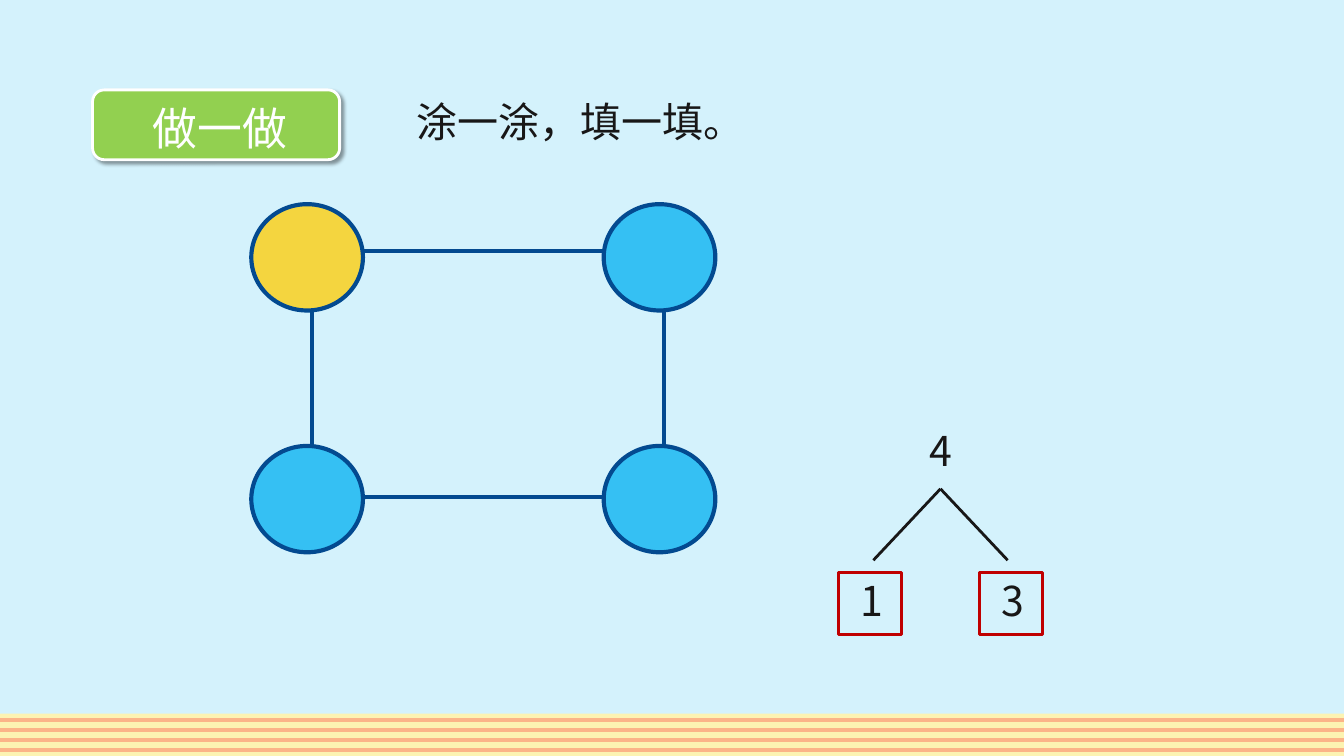
from lxml import etree
from pptx import Presentation
from pptx import util as u
from pptx.dml.color import RGBColor
from pptx.enum import shapes, text
from pptx.oxml import ns

FONT = "Noto Sans CJK SC"
INK, NAVY, RED, WHITE = "181717", "034A90", "C00000", "FFFFFF"
YELLOW, BLUE = "FFCC00", "00B0F0"
W, H = 25.4, 14.29
KIND = shapes.MSO_SHAPE


def rgb(value):
    """Turn a hex string into a colour."""
    return RGBColor.from_string(value)


def sub(parent, tag, **attrs):
    """Append a DrawingML element to a parent."""
    return etree.SubElement(parent, ns.qn(tag), attrs)


def shape(s, kind, box, fill=None, line=None, width=1.5, alpha=None):
    """Add a preset shape with optional fill, transparency and outline."""
    sp = s.shapes.add_shape(kind, *map(u.Cm, box))
    sp.shadow.inherit = False
    if fill:
        sp.fill.solid()
        sp.fill.fore_color.rgb = rgb(fill)
        if alpha:
            clr = sp._element.spPr.find(".//" + ns.qn("a:srgbClr"))
            sub(clr, "a:alpha", val=str(alpha * 1000))
    else:
        sp.fill.background()
    if line:
        sp.line.color.rgb = rgb(line)
        sp.line.width = u.Pt(width)
    else:
        sp.line.fill.background()
    return sp


def line(s, x1, y1, x2, y2, color, width):
    """Add a straight line without shadow."""
    c = s.shapes.add_connector(shapes.MSO_CONNECTOR.STRAIGHT, *map(u.Cm, (x1, y1, x2, y2)))
    c.line.color.rgb = rgb(color)
    c.line.width = u.Pt(width)
    sub(c._element.spPr, "a:effectLst")


def write(sp, words, size=22, color=INK, align=text.PP_ALIGN.CENTER):
    """Fill a shape with one formatted paragraph."""
    tf = sp.text_frame
    tf.word_wrap = False
    tf.vertical_anchor = text.MSO_ANCHOR.TOP
    tf.margin_left = tf.margin_right = u.Cm(0.25)
    tf.margin_top = tf.margin_bottom = u.Cm(0.13)
    p = tf.paragraphs[0]
    p.text = words
    p.alignment = align
    p.font.size = u.Pt(size)
    p.font.name = FONT
    p.font.color.rgb = rgb(color)
    sub(p.runs[0].font._element, "a:ea", typeface=FONT)
    return p


def label(s, box, words, **style):
    """Add a text box with one paragraph."""
    return write(s.shapes.add_textbox(*map(u.Cm, box)), words, **style)


def backdrop(s, box):
    """Draw the sky and the striped strip along its bottom."""
    l, t, w, h = box
    shape(s, KIND.RECTANGLE, box, "D4F2FC")
    top = t + h - 0.8
    shape(s, KIND.RECTANGLE, (l, top, w, 0.8), "FCF3B2")
    for i in range(4):
        y = top + 0.12 + 0.19 * i
        line(s, l, y, l + w, y, "FBB488", 2.25)


def heading(s, box):
    """Place the instruction in the title placeholder."""
    sp = s.shapes.title
    sp.left, sp.top, sp.width, sp.height = map(u.Cm, box)
    write(sp, "涂一涂，填一填。")


def badge(s, box):
    """Draw the green exercise badge with its shadow."""
    l, t, w, h = box
    sp = shape(s, KIND.ROUNDED_RECTANGLE, box, "92D050", WHITE)
    effects = sp._element.spPr.find(ns.qn("a:effectLst"))
    shadow = sub(effects, "a:outerShdw", blurRad="25400", dist="25400",
                 dir="2700000", algn="tl", rotWithShape="0")
    sub(sub(shadow, "a:srgbClr", val="000000"), "a:alpha", val="40000")
    p = label(s, (l + 0.38, t + 0.03, w - 0.61, 1.22), "做一做", size=24, color=WHITE)
    p.line_spacing = 1.05


def circle_square(s, box):
    """Draw four linked circles at the corners of the box."""
    l, t, w, h = box
    cw, ch = 2.11, 2.01
    dx, dy = w - cw, h - ch
    for i in range(2):
        y = t + 0.89 + 4.65 * i
        line(s, l + cw, y, l + dx, y, NAVY, 2.25)
        x = l + 1.14 + dx * i
        line(s, x, t + ch, x, t + dy, NAVY, 2.25)
    for i, fill in enumerate((YELLOW, BLUE, BLUE, BLUE)):
        row, col = divmod(i, 2)
        corner = (l + dx * col, t + dy * row, cw, ch)
        shape(s, KIND.OVAL, corner, fill, NAVY, 2.25, alpha=75)


def number_bond(s, box, whole, parts):
    """Draw a number split into two boxed parts."""
    l, t, w, h = box
    side, tall = 1.19, 1.17
    mid = l + w / 2
    left = text.PP_ALIGN.LEFT
    label(s, (mid - 0.46, t, 0.91, 1.19), whole, align=left)
    for i, part in enumerate(parts):
        x, y = l + (w - side) * i, t + h - tall
        shape(s, KIND.RECTANGLE, (x, y, side, tall), line=RED)
        line(s, mid, t + 1.32, mid + 1.27 * (2 * i - 1), t + 2.67, INK, 1.5)
        label(s, (x + 0.16, y - 0.08, 0.91, 1.19), part, align=left)


def main():
    """Build the slide and save it."""
    prs = Presentation()
    prs.slide_width, prs.slide_height = u.Cm(W), u.Cm(H)
    s = prs.slides.add_slide(prs.slide_layouts[5])
    backdrop(s, (0, 0, W, H))
    title = s.shapes.title._element
    title.getparent().append(title)
    heading(s, (7.57, 1.7, 6.81, 1.19))
    circle_square(s, (4.75, 3.86, 8.77, 6.58))
    number_bond(s, (15.85, 7.92, 3.85, 4.07), "4", ("1", "3"))
    badge(s, (1.75, 1.7, 4.67, 1.32))
    prs.save("out.pptx")


if __name__ == "__main__":
    main()
